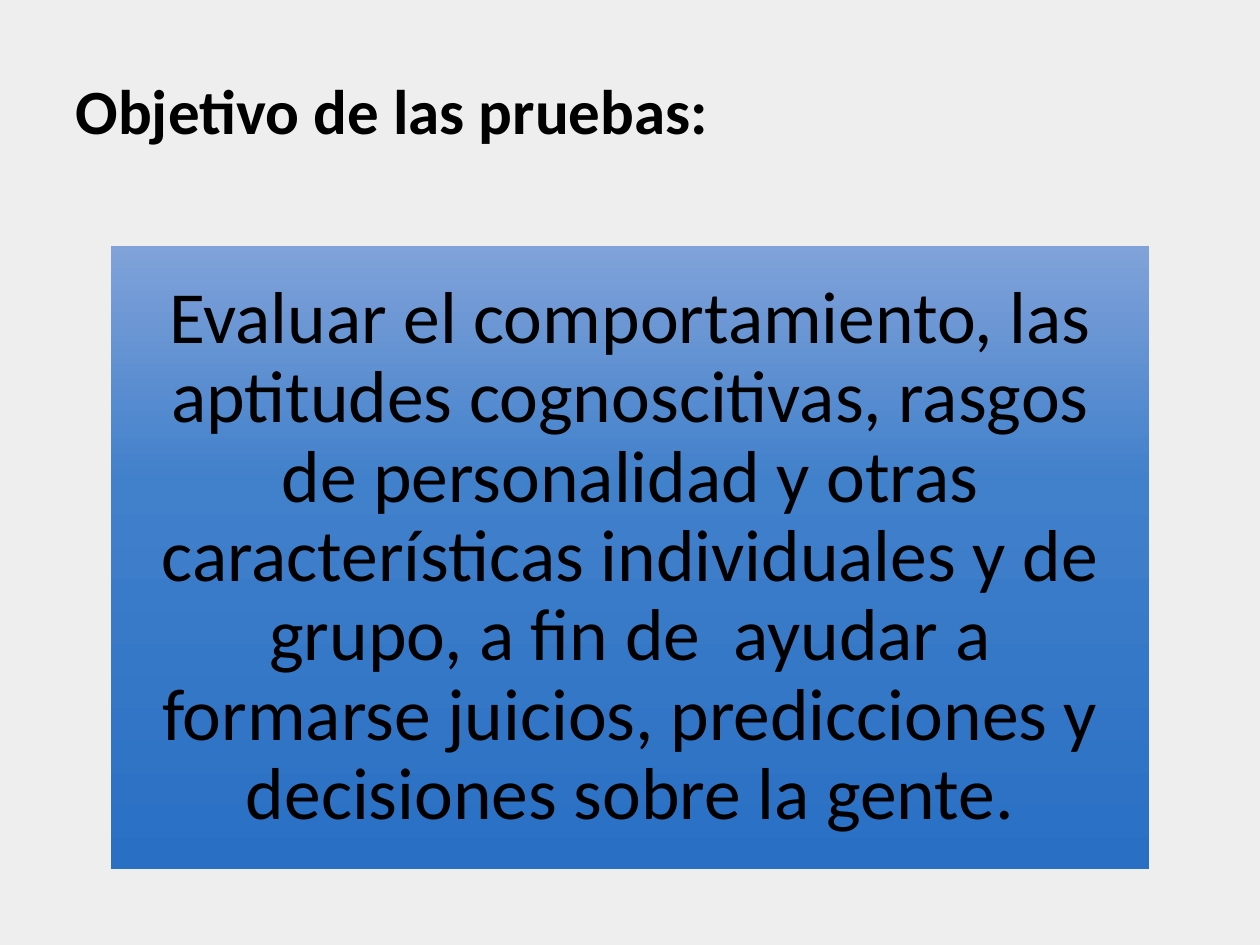
import copy

import pptx
import pptx.dml.color
import pptx.enum.shapes
import pptx.enum.text
import pptx.util
from pptx.util import Inches

COLORS = {
    "background": "EEEEEE",
    "text": "000000",
    "panel_bottom": "296FC4",
    "panel_middle": "4180CB",
    "panel_top": "80A2D9",
}
FONT = "Calibri"
TITLE = "Objetivo de las pruebas:"
OBJECTIVE = (
    "Evaluar el comportamiento, las aptitudes cognoscitivas, rasgos de "
    "personalidad y otras características individuales y de grupo, a fin de  "
    "ayudar a formarse juicios, predicciones y decisiones sobre la gente."
)


def color(name: str) -> pptx.dml.color.RGBColor:
    return pptx.dml.color.RGBColor.from_string(COLORS[name])


def write_text(shape, text: str, size: int, bold: bool, alignment, anchor) -> None:
    frame = shape.text_frame
    frame.text = text
    frame.word_wrap = True
    frame.auto_size = pptx.enum.text.MSO_AUTO_SIZE.NONE
    frame.vertical_anchor = anchor
    paragraph = frame.paragraphs[0]
    paragraph.alignment = alignment
    paragraph.font.name = FONT
    paragraph.font.size = pptx.util.Pt(size)
    paragraph.font.bold = bold
    paragraph.font.color.rgb = color("text")


def fill_panel(shape) -> None:
    """Blend three colours from the bottom edge to the top."""
    shape.fill.gradient()
    shape.fill.gradient_angle = 90
    stop_list = shape.fill._fill._gradFill.gsLst
    stop_list.append(copy.deepcopy(stop_list[-1]))
    levels = [(0, "panel_bottom"), (0.62, "panel_middle"), (1, "panel_top")]
    for stop, (position, name) in zip(shape.fill.gradient_stops, levels):
        stop.position = position
        stop.color.rgb = color(name)


def main() -> None:
    presentation = pptx.Presentation()
    presentation.slide_width = Inches(10)
    presentation.slide_height = Inches(7.5)
    slide = presentation.slides.add_slide(presentation.slide_layouts[5])
    slide.background.fill.solid()
    slide.background.fill.fore_color.rgb = color("background")

    # Objective panel
    panel = slide.shapes.add_shape(
        pptx.enum.shapes.MSO_SHAPE.RECTANGLE,
        Inches(0.88), Inches(1.95), Inches(8.24), Inches(4.95),
    )
    panel.shadow.inherit = False
    panel.line.fill.background()
    fill_panel(panel)
    write_text(panel, OBJECTIVE, 42, False,
               pptx.enum.text.PP_ALIGN.CENTER, pptx.enum.text.MSO_ANCHOR.MIDDLE)
    frame = panel.text_frame
    frame.margin_left = frame.margin_right = Inches(0.17)
    frame.margin_top = frame.margin_bottom = Inches(0.17)
    frame.paragraphs[0].line_spacing = 0.9

    # Title
    title = slide.shapes.title
    title.left, title.top = Inches(0.5), Inches(-0.03)
    title.width, title.height = Inches(9), Inches(1.25)
    write_text(title, TITLE, 36, True,
               pptx.enum.text.PP_ALIGN.LEFT, pptx.enum.text.MSO_ANCHOR.BOTTOM)

    presentation.save("out.pptx")


if __name__ == "__main__":
    main()
